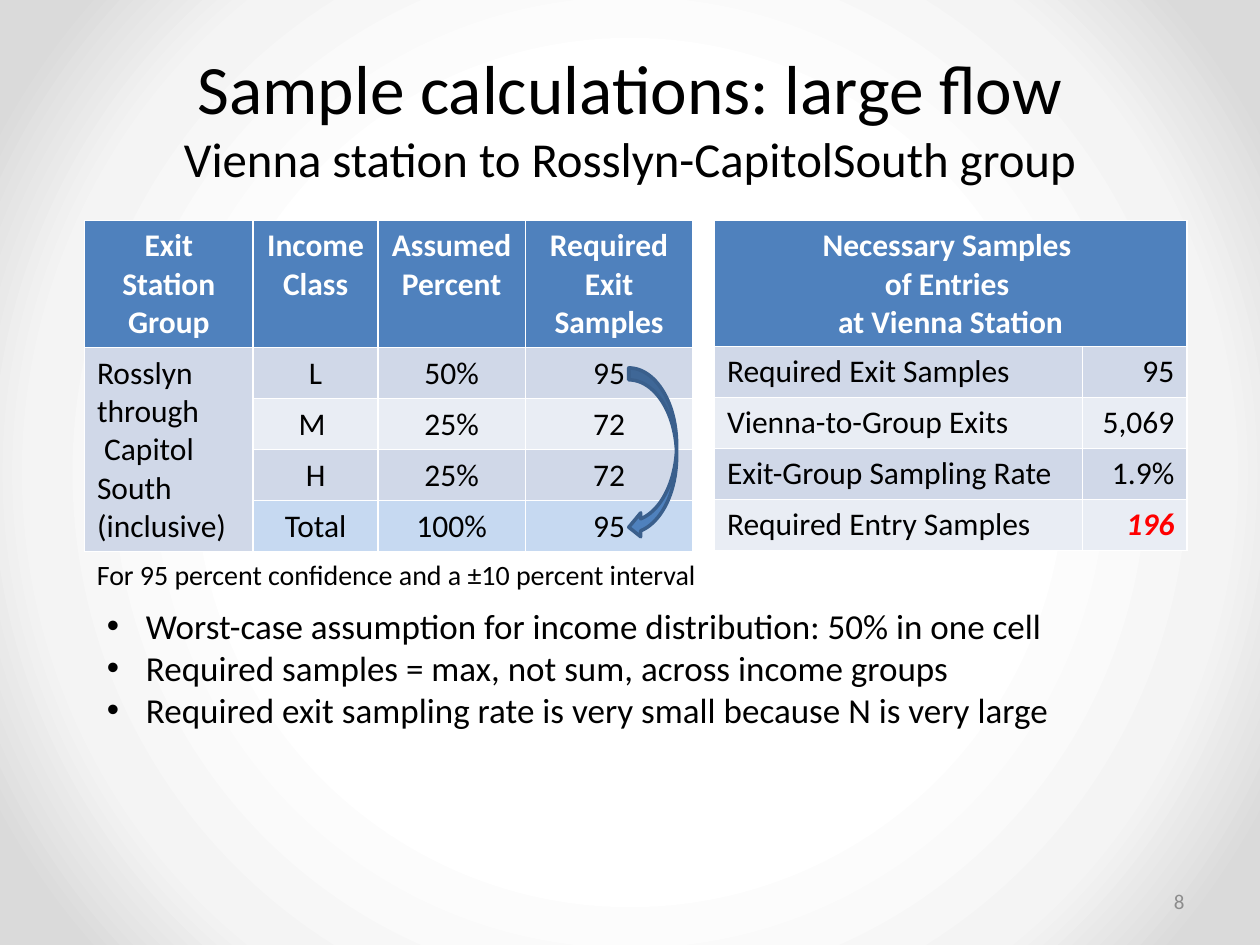
from lxml.etree import SubElement
from pptx import Presentation
from pptx.dml.color import RGBColor
from pptx.enum.shapes import MSO_SHAPE as Shape
from pptx.enum.text import MSO_ANCHOR as Anchor, PP_ALIGN as Align
from pptx.oxml import parse_xml
from pptx.oxml.ns import nsdecls, qn
from pptx.util import Inches, Pt

# Content
TITLE = [("Sample calculations: large flow", 39.6),
         ("Vienna station to Rosslyn-CapitolSouth group", 27.9)]
EXITS = [
    ["Exit Station Group", "Income Class", "Assumed Percent", "Required Exit Samples"],
    ["Rosslyn\vthrough\v Capitol South (inclusive)", "L", "50%", "95"],
    ["", "M ", "25%", "72"],
    ["", "H", "25%", "72"],
    ["", "Total", "100%", "95"],
]
ENTRIES = [
    ["Necessary Samples \nof Entries \nat Vienna Station", ""],
    ["Required Exit Samples", "95"],
    ["Vienna-to-Group Exits", "5,069"],
    ["Exit-Group Sampling Rate", "1.9%"],
    ["Required Entry Samples", "196"],
]
NOTE = "For 95 percent confidence and a ±10 percent interval"
POINTS = [
    "Worst-case assumption for income distribution: 50% in one cell",
    "Required samples = max, not sum, across income groups",
    "Required exit sampling rate is very small because N is very large",
]
PAGE = "8"

BLACK, WHITE, GRAY, RED = "000000", "FFFFFF", "8C8C8C", "FF0000"
BLUE, DARK_BLUE, TOTAL_BLUE = "4F81BD", "3A5F8C", "C6D9F1"
BANDS = ["D0D8E8", "E9EDF4"]
BACKDROP = [(50, WHITE), (76, "F4F4F4"), (92, "DADADA")]


def rgb(color):
    return RGBColor.from_string(color)


def style(paragraph, size, color=BLACK, align=Align.LEFT, bold=False):
    paragraph.alignment = align
    font = paragraph.font
    font.name, font.size, font.bold = "Calibri", Pt(size), bold
    font.color.rgb = rgb(color)


def add_text(slide, box, text, size, color=BLACK, align=Align.LEFT, anchor=Anchor.TOP):
    frame = slide.shapes.add_textbox(*map(Inches, box)).text_frame
    frame.word_wrap = True
    frame.vertical_anchor = anchor
    frame.text = text
    for paragraph in frame.paragraphs:
        style(paragraph, size, color, align)
    return frame


def add_bullet(paragraph):
    properties = paragraph._p.get_or_add_pPr()
    properties.set("marL", str(Inches(0.31)))
    properties.set("indent", str(Inches(-0.31)))
    SubElement(properties, qn("a:buFont"), typeface="Arial")
    SubElement(properties, qn("a:buChar"), char="•")


def add_table(slide, left, rows, widths, header_height, aligns):
    heights = [header_height] + [0.405] * (len(rows) - 1)
    box = (left, 1.75, sum(widths), sum(heights))
    table = slide.shapes.add_table(len(rows), len(widths), *map(Inches, box)).table
    for column, width in zip(table.columns, widths):
        column.width = Inches(width)
    for r, (row, height) in enumerate(zip(rows, heights)):
        table.rows[r].height = Inches(height)
        for c, text in enumerate(row):
            cell = table.cell(r, c)
            cell.text = text
            cell.fill.solid()
            cell.fill.fore_color.rgb = rgb(BANDS[(r - 1) % 2] if r else BLUE)
            for paragraph in cell.text_frame.paragraphs:
                if r:
                    style(paragraph, 18, align=aligns[c])
                else:
                    style(paragraph, 18, WHITE, Align.CENTER, bold=True)
    return table


prs = Presentation()
prs.slide_width, prs.slide_height = Inches(10), Inches(7.5)
slide = prs.slides.add_slide(prs.slide_layouts[6])

# Background: radial gradient from the centre
slide.background.fill.solid()
background = slide.background._cSld.find(qn("p:bg")).find(qn("p:bgPr"))
stops = "".join(f'<a:gs pos="{pos * 1000}"><a:srgbClr val="{color}"/></a:gs>'
                for pos, color in BACKDROP)
background.replace(background[0], parse_xml(
    f'<a:gradFill {nsdecls("a")} rotWithShape="1"><a:gsLst>{stops}</a:gsLst>'
    '<a:path path="circle"><a:fillToRect l="50000" t="50000" r="50000" b="50000"/>'
    '</a:path></a:gradFill>'))

# Title and page number
title = add_text(slide, (0.5, 0.3, 9, 1.25), "\n".join(line for line, _ in TITLE),
                 40, align=Align.CENTER, anchor=Anchor.MIDDLE)
for paragraph, (_, size) in zip(title.paragraphs, TITLE):
    paragraph.font.size = Pt(size)
add_text(slide, (7.17, 6.95, 2.33, 0.4), PAGE, 12, GRAY, Align.RIGHT, Anchor.MIDDLE)

# Exit samples by income class
exits = add_table(slide, 0.67, EXITS, [1.34, 0.99, 1.17, 1.33], 1.01,
                  [Align.LEFT] + [Align.CENTER] * 3)
exits.cell(1, 0).merge(exits.cell(4, 0))
for c in (1, 2, 3):
    exits.cell(4, c).fill.fore_color.rgb = rgb(TOTAL_BLUE)

# Arrow from the largest class to the total
arrow = slide.shapes.add_shape(Shape.CURVED_LEFT_ARROW,
                               *map(Inches, (4.99, 2.92, 0.38, 1.36)))
arrow.shadow.inherit = False
arrow.fill.solid()
arrow.fill.fore_color.rgb = rgb(BLUE)
arrow.line.color.rgb = rgb(DARK_BLUE)
arrow.line.width = Pt(2)

# Note and conclusions
add_text(slide, (0.67, 4.38, 6.25, 0.37), NOTE, 16)
points = add_text(slide, (0.75, 4.75, 7.75, 1.11), "\n".join(POINTS), 20)
for paragraph in points.paragraphs:
    add_bullet(paragraph)

# Entry samples
entries = add_table(slide, 5.67, ENTRIES, [2.92, 0.83], 0.99, [Align.LEFT, Align.RIGHT])
entries.cell(0, 0).merge(entries.cell(0, 1))
result = entries.cell(4, 1).text_frame.paragraphs[0].font
result.bold = result.italic = True
result.color.rgb = rgb(RED)

prs.save("out.pptx")
